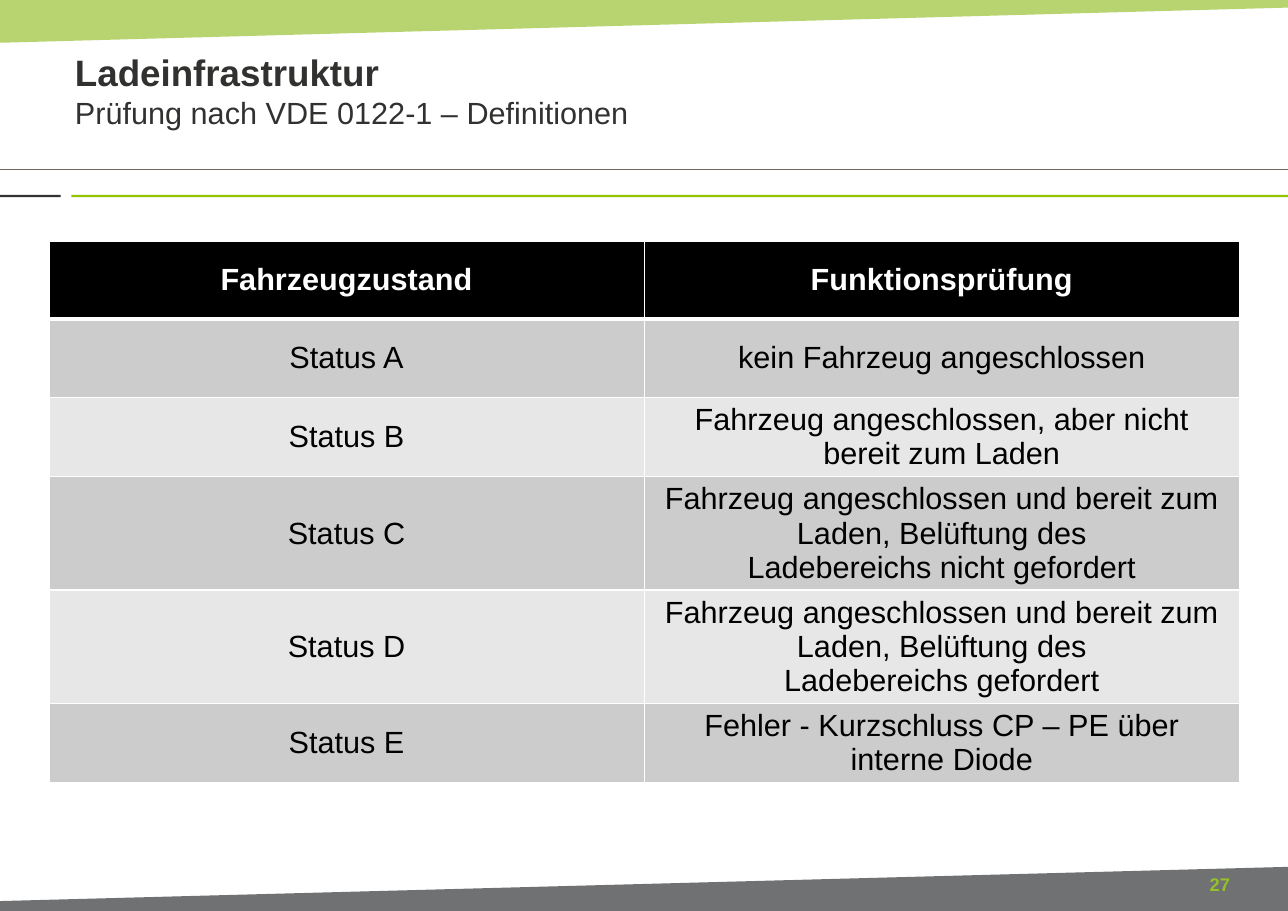
import pptx
import pptx.dml.color
import pptx.enum.shapes
import pptx.enum.text
import pptx.oxml
import pptx.oxml.ns
import pptx.util

Pt = pptx.util.Pt
RGB = pptx.dml.color.RGBColor
ALIGN = pptx.enum.text.PP_ALIGN
ANCHOR = pptx.enum.text.MSO_ANCHOR

WIDTH, HEIGHT = 841.68, 595.44
LIME = RGB(0x95, 0xC0, 0x2A)
GREEN = RGB(0x94, 0xC6, 0x00)
DARK = RGB(0x31, 0x31, 0x30)
GRAY = RGB(0x70, 0x71, 0x73)
TAUPE = RGB(0x71, 0x68, 0x5A)
WHITE = RGB(0xFF, 0xFF, 0xFF)
BLACK = RGB(0x00, 0x00, 0x00)
ROW_FILLS = (RGB(0xE7, 0xE7, 0xE7), RGB(0xCC, 0xCC, 0xCC))

ROWS = [
    (["Fahrzeugzustand"], ["Funktionsprüfung"]),
    (["Status A"], ["kein Fahrzeug angeschlossen"]),
    (["Status B"], ["Fahrzeug angeschlossen, aber nicht bereit zum Laden"]),
    (["Status C"], ["Fahrzeug angeschlossen und bereit zum Laden, Belüftung des",
                    "Ladebereichs nicht gefordert"]),
    (["Status D"], ["Fahrzeug angeschlossen und bereit zum Laden, Belüftung des",
                    "Ladebereichs gefordert"]),
    (["Status E"], ["Fehler - Kurzschluss CP – PE über interne Diode"]),
]


def add_xml(parent, tag, **attrs):
    el = pptx.oxml.parse_xml(f"<{tag} {pptx.oxml.ns.nsdecls('a')}/>")
    for name, value in attrs.items():
        el.set(name, str(value))
    parent.append(el)
    return el


def add_run(p, text, size, color, bold=False):
    r = p.add_run()
    r.text = text
    r.font.name = "Arial"
    r.font.size = Pt(size)
    r.font.bold = bold
    r.font.color.rgb = color


def paint(sp, color):
    sp.shadow.inherit = False
    sp.fill.solid()
    sp.fill.fore_color.rgb = color
    sp.line.fill.background()


def add_band(s, points, color):
    corners = [(Pt(x), Pt(y)) for x, y in points]
    builder = s.shapes.build_freeform(*corners[0])
    builder.add_line_segments(corners[1:])
    sp = builder.convert_to_shape()
    paint(sp, color)
    return sp


def add_bar(s, left, width, color):
    sp = s.shapes.add_shape(pptx.enum.shapes.MSO_SHAPE.RECTANGLE,
                            Pt(left), Pt(127.3), Pt(width), Pt(1.5))
    paint(sp, color)


def add_rule(s, y):
    line = s.shapes.add_connector(pptx.enum.shapes.MSO_CONNECTOR.STRAIGHT,
                                  Pt(WIDTH), Pt(y), 0, Pt(y))
    line.line.color.rgb = TAUPE
    line.line.width = Pt(0.75)
    add_xml(line._element.spPr, "a:effectLst")


def add_title(s):
    title = s.shapes.title
    title.left, title.top, title.width, title.height = Pt(41), Pt(25.2), Pt(527), Pt(67)
    tf = title.text_frame
    tf.word_wrap = True
    tf.auto_size = pptx.enum.text.MSO_AUTO_SIZE.NONE
    tf.vertical_anchor = ANCHOR.MIDDLE
    tf.margin_left = tf.margin_right = Pt(8)
    first, second = tf.paragraphs[0], tf.add_paragraph()
    first.alignment = second.alignment = ALIGN.LEFT
    add_run(first, "Ladeinfrastruktur", 24, DARK, True)
    add_run(second, "Prüfung nach VDE 0122-1 – Definitionen", 20, DARK)


def format_cell(cell, lines, is_header, fill):
    cell.vertical_anchor = ANCHOR.MIDDLE
    tf = cell.text_frame
    for i, text in enumerate(lines):
        p = tf.add_paragraph() if i else tf.paragraphs[0]
        p.alignment = ALIGN.CENTER
        add_run(p, text, 20, WHITE if is_header else BLACK, is_header)
    tc_pr = cell._tc.get_or_add_tcPr()
    for side in ("lnL", "lnR", "lnT", "lnB"):
        width = 3 if is_header and side == "lnB" else 1
        ln = add_xml(tc_pr, f"a:{side}", w=Pt(width))
        add_xml(add_xml(ln, "a:solidFill"), "a:srgbClr", val=WHITE)
    cell.fill.solid()
    cell.fill.fore_color.rgb = fill


def add_status_table(s):
    frame = s.shapes.add_table(len(ROWS), 2, Pt(32), Pt(157.7), Pt(778), Pt(51 * len(ROWS)))
    for i, row in enumerate(ROWS):
        fill = ROW_FILLS[i % 2] if i else BLACK
        for j, lines in enumerate(row):
            format_cell(frame.table.cell(i, j), lines, i == 0, fill)


def add_page_number(s):
    box = s.shapes.add_textbox(Pt(772.6), Pt(568), Pt(49), Pt(21))
    tf = box.text_frame
    tf.word_wrap = True
    tf.vertical_anchor = ANCHOR.MIDDLE
    p = tf.paragraphs[0]
    p.alignment = ALIGN.CENTER
    p.line_spacing = 0.9
    add_run(p, "27", 12, LIME, True)


def main():
    prs = pptx.Presentation()
    prs.slide_width, prs.slide_height = Pt(WIDTH), Pt(HEIGHT)
    s = prs.slides.add_slide(prs.slide_layouts[5])
    top = add_band(s, [(0, 0), (WIDTH, 0), (WIDTH, 5), (0, 28)], LIME)
    color = top._element.spPr.find(".//" + pptx.oxml.ns.qn("a:srgbClr"))
    add_xml(color, "a:alpha", val=67000)
    add_bar(s, 0, 39.6, DARK)
    add_bar(s, 46.6, WIDTH - 46.6, GREEN)
    add_band(s, [(WIDTH, HEIGHT), (0, HEIGHT), (0, 589), (WIDTH, 566.6)], GRAY)
    add_rule(s, 110.9)
    add_title(s)
    add_status_table(s)
    add_page_number(s)
    prs.save("out.pptx")


if __name__ == "__main__":
    main()
